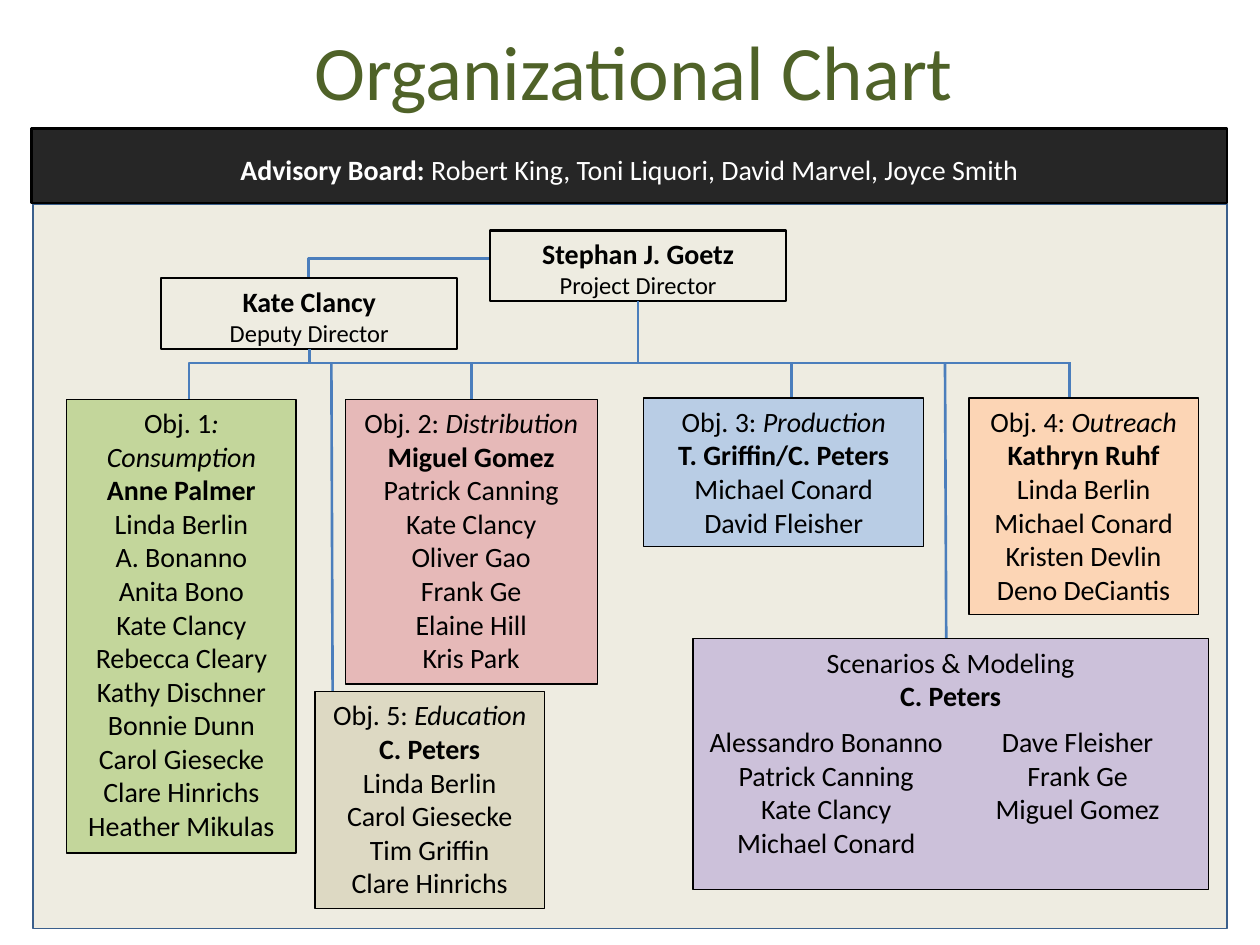
from lxml import etree
from pptx import Presentation
from pptx.dml.color import RGBColor
from pptx.enum.shapes import MSO_CONNECTOR, MSO_SHAPE
from pptx.enum.text import MSO_ANCHOR, MSO_AUTO_SIZE, PP_ALIGN
from pptx.oxml.ns import qn
from pptx.util import Inches, Pt

RECT = MSO_SHAPE.RECTANGLE
STRAIGHT, ELBOW = MSO_CONNECTOR.STRAIGHT, MSO_CONNECTOR.ELBOW
TOP, MIDDLE = MSO_ANCHOR.TOP, MSO_ANCHOR.MIDDLE
CENTER, GROW = PP_ALIGN.CENTER, MSO_AUTO_SIZE.SHAPE_TO_FIT_TEXT

BLACK = RGBColor(0, 0, 0)
WHITE = RGBColor(255, 255, 255)
CHARCOAL = RGBColor(0x26, 0x26, 0x26)
CREAM = RGBColor(0xEE, 0xEC, 0xE1)
NAVY = RGBColor(0x3A, 0x5F, 0x8C)
BLUE = RGBColor(0x4B, 0x7E, 0xBC)
OLIVE = RGBColor(0x4F, 0x62, 0x28)
GREEN = RGBColor(0xC3, 0xD6, 0x9B)
PINK = RGBColor(0xE6, 0xB9, 0xB8)
SKY = RGBColor(0xB9, 0xCD, 0xE5)
PEACH = RGBColor(0xFC, 0xD5, 0xB5)
TAN = RGBColor(0xDD, 0xD9, 0xC3)
LILAC = RGBColor(0xCC, 0xC1, 0xDA)

FONT = "Calibri"
BOLD, ITALIC, SMALL = {"bold": True}, {"italic": True}, {"size": Pt(14)}
BUS = 2.88  # height of the line that feeds every team

TITLE = "Organizational Chart"
BOARD = [[("Advisory Board: ", BOLD),
          ("Robert King, Toni Liquori, David Marvel, Joyce Smith", {})]]
CHIEFS = [
    ("Stephan J. Goetz", "Project Director", (3.89, 1.83)),
    ("Kate Clancy", "Deputy Director", (1.28, 2.21)),
]
# label, topic, lead, members, fill, (left, top, width, height)
TEAMS = [
    ("Obj. 1", ": Consumption", "Anne Palmer",
     ["Linda Berlin", "A. Bonanno", "Anita Bono", "Kate Clancy",
      "Rebecca Cleary", "Kathy Dischner", "Bonnie Dunn", "Carol Giesecke",
      "Clare Hinrichs", "Heather Mikulas"], GREEN, (0.53, 3.17, 1.82, 3.6)),
    ("Obj. 2: ", "Distribution", "Miguel Gomez",
     ["Patrick Canning", "Kate Clancy", "Oliver Gao", "Frank Ge",
      "Elaine Hill", "Kris Park"], PINK, (2.74, 3.17, 2, 2.26)),
    ("Obj. 3: ", "Production", "T. Griffin/C. Peters",
     ["Michael Conard", "David Fleisher"], SKY, (5.11, 3.16, 2.22, 1.18)),
    ("Obj. 4: ", "Outreach", "Kathryn Ruhf",
     ["Linda Berlin", "Michael Conard", "Kristen Devlin", "Deno DeCiantis"],
     PEACH, (7.69, 3.16, 1.82, 1.72)),
    ("Obj. 5: ", "Education", "C. Peters",
     ["Linda Berlin", "Carol Giesecke", "Tim Griffin", "Clare Hinrichs"],
     TAN, (2.5, 5.49, 1.82, 1.72)),
]
MODEL = [[("Scenarios & Modeling", {})], [("C. Peters", BOLD)]]
MODELERS = ["Alessandro Bonanno", "Patrick Canning", "Kate Clancy",
            "Michael Conard", "Dave Fleisher", "Frank Ge", "Miguel Gomez"]
# x at the bus, x and y at the team
DROPS = [(6.28, 6.28, 3.16), (8.49, 8.49, 3.16),
         (2.63, 2.64, 5.49), (7.5, 7.51, 5.07)]


def style(item, values):
    for name, value in values.items():
        setattr(item, name, value)


def write(frame, paras, color=BLACK, size=16):
    """Fill a frame with paragraphs, each a list of (text, format) runs."""
    for i, runs in enumerate(paras):
        para = frame.add_paragraph() if i else frame.paragraphs[0]
        para.alignment = CENTER
        for text, form in runs:
            run = para.add_run()
            run.text = text
            style(run.font, {"name": FONT, "size": Pt(size), **form})
            run.font.color.rgb = color


def box(slide, place, paras=(), fill=None, line=BLACK, width=0.75,
        color=BLACK, **frame):
    shape = slide.shapes.add_shape(RECT, *map(Inches, place))
    shape.shadow.inherit = False
    if fill is None:
        shape.fill.background()
    else:
        shape.fill.solid()
        shape.fill.fore_color.rgb = fill
    if line is None:
        shape.line.fill.background()
    else:
        shape.line.color.rgb = line
        shape.line.width = Pt(width)
    if paras:
        style(shape.text_frame, {"word_wrap": True, "auto_size": GROW,
                                 "vertical_anchor": TOP, **frame})
        write(shape.text_frame, paras, color)
    return shape


def link(slide, start, end, kind=STRAIGHT):
    line = slide.shapes.add_connector(kind, *map(Inches, start + end))
    line.line.color.rgb = BLUE
    line.line.width = Pt(1.5)
    props = line._element.spPr
    etree.SubElement(props, qn("a:effectLst"))
    if kind == ELBOW:  # a single corner
        props.find(qn("a:prstGeom")).set("prst", "bentConnector2")
    return line


def join(slide, shape, site):
    """Run a straight line between the bus and a shape's top or bottom."""
    x = (shape.left + shape.width / 2) / Inches(1)
    line = link(slide, (x, BUS), (x, BUS))
    line.end_connect(shape, site)


def main():
    deck = Presentation()
    deck.slide_width, deck.slide_height = Inches(10), Inches(7.5)
    slide = deck.slides.add_slide(deck.slide_layouts[5])

    title = slide.shapes.title
    style(title, dict(zip(("left", "top", "width", "height"),
                          map(Inches, (0.03, 0.1, 10, 0.9)))))
    title.text_frame.vertical_anchor = MIDDLE
    write(title.text_frame, [[(TITLE, {})]], OLIVE, 44)

    box(slide, (0.26, 1.62, 9.48, 5.75), fill=CREAM, line=NAVY, width=1)
    box(slide, (0.25, 1.02, 9.49, 0.59), BOARD, CHARCOAL, width=1.25,
        color=WHITE, margin_top=Inches(0.19))

    link(slide, (8.5, BUS), (1.5, 3.17), ELBOW)
    link(slide, (3.89, 2.05), (2.45, 2.21), ELBOW)
    for x, foot, y in DROPS:
        link(slide, (x, BUS), (foot, y))

    for name, role, spot in CHIEFS:
        chief = box(slide, spot + (2.35, 0.56),
                    [[(name, BOLD)], [(role, SMALL)]], width=1.25)
        join(slide, chief, 2)

    teams = []
    for label, topic, lead, names, fill, place in TEAMS:
        paras = [[(label, {}), (topic, ITALIC)], [(lead, BOLD)]]
        paras += [[(name, {})] for name in names]
        teams.append(box(slide, place, paras, fill))
    join(slide, teams[1], 0)

    box(slide, (5.5, 5.07, 4.09, 1.99), MODEL, LILAC)
    flat = dict.fromkeys(("margin_left", "margin_top",
                          "margin_right", "margin_bottom"), 0)
    staff = box(slide, (5.56, 5.75, 3.99, 1.08),
                [[(name, {})] for name in MODELERS], LILAC, None, **flat)
    staff.text_frame._txBody.bodyPr.set("numCol", "2")

    deck.save("out.pptx")


if __name__ == "__main__":
    main()
